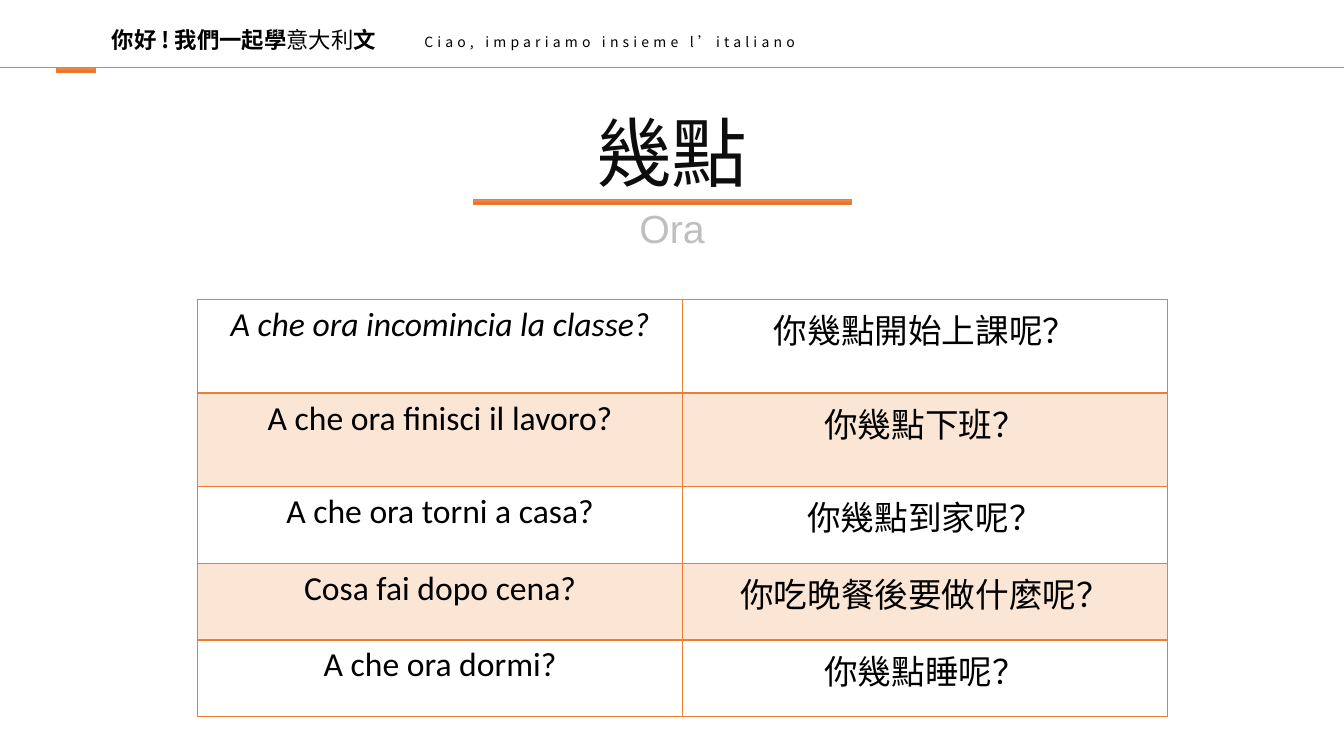
from lxml.etree import SubElement
from pptx import Presentation
from pptx.dml.color import RGBColor
from pptx.enum.shapes import MSO_CONNECTOR, MSO_SHAPE
from pptx.enum.text import PP_ALIGN
from pptx.oxml.ns import qn
from pptx.util import Inches, Pt

BLACK = RGBColor(0, 0, 0)
TITLE_INK = RGBColor(0x0D, 0x0D, 0x0D)
GREY = RGBColor(0xBF, 0xBF, 0xBF)
ORANGE = RGBColor(0xED, 0x7D, 0x31)
BAR_LIGHT = RGBColor(0xF1, 0x8C, 0x57)
BAR_DARK = RGBColor(0xE5, 0x6C, 0x19)
CJK = "Noto Sans CJK SC"

SLIDE_WIDTH = 13.33
ROW_HEIGHTS = [0.93, 0.93, 0.76, 0.76, 0.76]
COLUMN_WIDTH = 4.81
QUESTIONS = [
    ("A che ora incomincia la classe?", "你幾點開始上課呢？"),
    ("A che ora finisci il lavoro?", "你幾點下班？"),
    ("A che ora torni a casa?", "你幾點到家呢？"),
    ("Cosa fai dopo cena?", "你吃晚餐後要做什麼呢？"),
    ("A che ora dormi?", "你幾點睡呢？"),
]


def set_font(font, size, name, color):
    font.size = Pt(size)
    font.name = name
    font.color.rgb = color


def add_text(slide, box, text, size, name, color, align=PP_ALIGN.LEFT):
    sp = slide.shapes.add_textbox(*map(Inches, box))
    tf = sp.text_frame
    tf.word_wrap = True
    p = tf.paragraphs[0]
    p.text = text
    p.alignment = align
    set_font(p.font, size, name, color)
    return p


def add_bar(slide, box):
    sp = slide.shapes.add_shape(MSO_SHAPE.RECTANGLE, *map(Inches, box))
    sp.shadow.inherit = False
    sp.fill.gradient()
    sp.fill.gradient_angle = 270
    for stop, color in zip(sp.fill.gradient_stops, (BAR_LIGHT, BAR_DARK)):
        stop.color.rgb = color
    sp.line.color.rgb = ORANGE
    sp.line.width = Pt(0.5)


def add_rule(slide, y):
    line = slide.shapes.add_connector(
        MSO_CONNECTOR.STRAIGHT, 0, Inches(y), Inches(SLIDE_WIDTH), Inches(y))
    line.line.color.rgb = ORANGE
    line.line.width = Pt(0.5)
    SubElement(line._element.spPr, qn("a:effectLst"))


def set_border(cell, side, width):
    ln = SubElement(cell._tc.get_or_add_tcPr(), qn(f"a:{side}"), w=str(Pt(width)))
    fill = SubElement(ln, qn("a:solidFill"))
    SubElement(fill, qn("a:srgbClr"), val=str(ORANGE))


def fill_cell(cell, banded):
    if not banded:
        cell.fill.background()
        return
    cell.fill.solid()
    cell.fill.fore_color.rgb = ORANGE
    color = cell._tc.tcPr.find(qn("a:solidFill")).find(qn("a:srgbClr"))
    SubElement(color, qn("a:alpha"), val="20000")


def add_questions(slide, left, top):
    frame = slide.shapes.add_table(
        len(QUESTIONS), 2, Inches(left), Inches(top),
        Inches(2 * COLUMN_WIDTH), Inches(sum(ROW_HEIGHTS)))
    table = frame.table
    table.first_row = table.horz_banding = False
    for column in table.columns:
        column.width = Inches(COLUMN_WIDTH)
    for i, (height, texts) in enumerate(zip(ROW_HEIGHTS, QUESTIONS)):
        table.rows[i].height = Inches(height)
        for j, (text, name) in enumerate(zip(texts, ("Calibri", "Roboto"))):
            cell = table.cell(i, j)
            # The line below the first row is double width
            widths = {"lnL": 1, "lnR": 1, "lnT": 2 if i == 1 else 1,
                      "lnB": 2 if i == 0 else 1}
            for side, width in widths.items():
                set_border(cell, side, width)
            fill_cell(cell, i % 2 == 1)
            p = cell.text_frame.paragraphs[0]
            p.text = text
            p.alignment = PP_ALIGN.CENTER
            set_font(p.font, 24, name, BLACK)
            p.font.italic = i == 0 and j == 0


def add_header(slide):
    p = add_text(slide, (1.01, 0.21, 3.45, 0.37), "", 16, CJK, BLACK)
    for text, name, bold in (("你好 ! 我們一起學", CJK, True),
                             ("意大利", "Calibri", False),
                             ("文", CJK, True)):
        r = p.add_run()
        r.text = text
        set_font(r.font, 16, name, BLACK)
        r.font.bold = bold
    p = add_text(slide, (4.11, 0.28, 8.41, 0.27),
                 "Ciao, impariamo insieme l’italiano", 10, CJK, BLACK)
    # Letter spacing of 3 pt
    p.runs[0]._r.get_or_add_rPr().set("spc", "300")
    add_rule(slide, 0.67)
    add_bar(slide, (0.56, 0.67, 0.39, 0.05))


def main():
    prs = Presentation()
    prs.slide_width = Inches(SLIDE_WIDTH)
    prs.slide_height = Inches(7.5)
    slide = prs.slides.add_slide(prs.slide_layouts[6])

    add_header(slide)

    # Title with its underline and translation
    add_text(slide, (0, 1, SLIDE_WIDTH, 1.01), "幾點", 54, "Arial",
             TITLE_INK, PP_ALIGN.CENTER)
    add_bar(slide, (4.7, 1.98, 3.74, 0.05))
    add_text(slide, (0, 1.98, SLIDE_WIDTH, 0.57), "Ora", 28, "Arial",
             GREY, PP_ALIGN.CENTER)

    add_questions(slide, 1.96, 2.97)
    prs.save("out.pptx")


if __name__ == "__main__":
    main()
